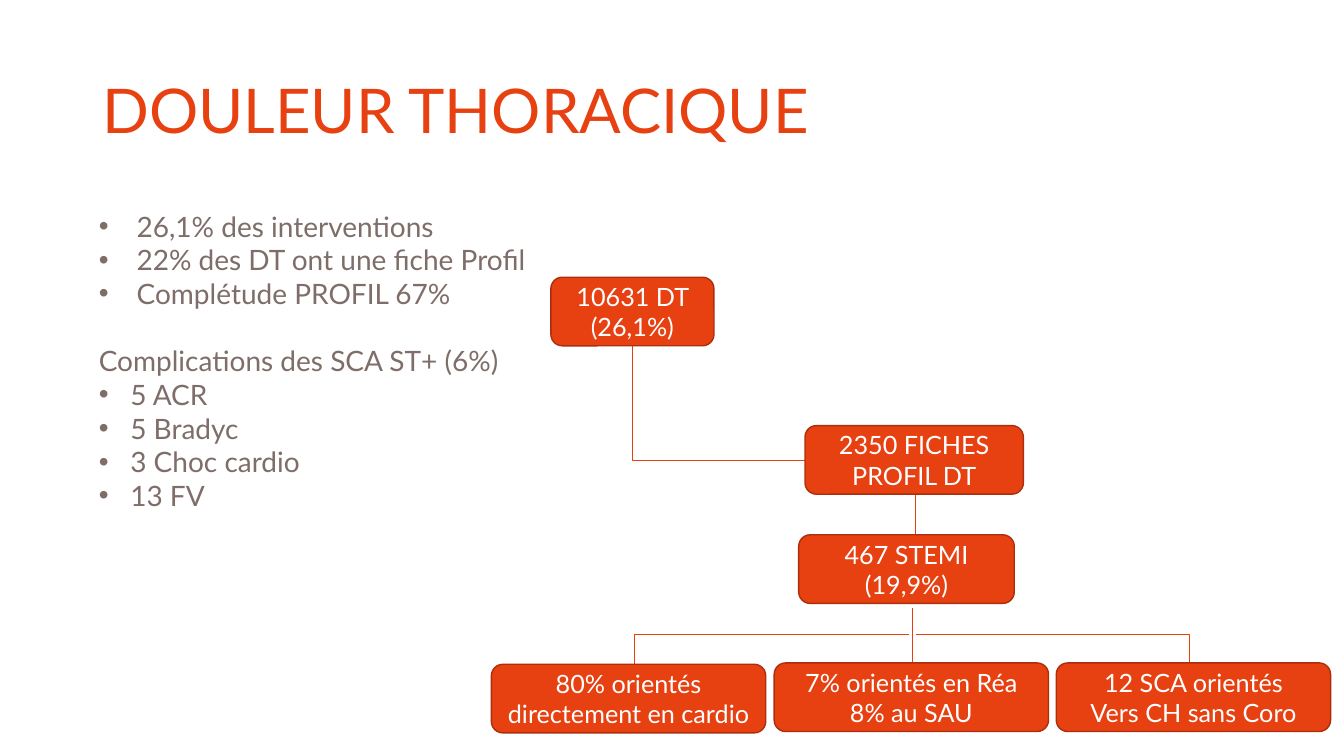
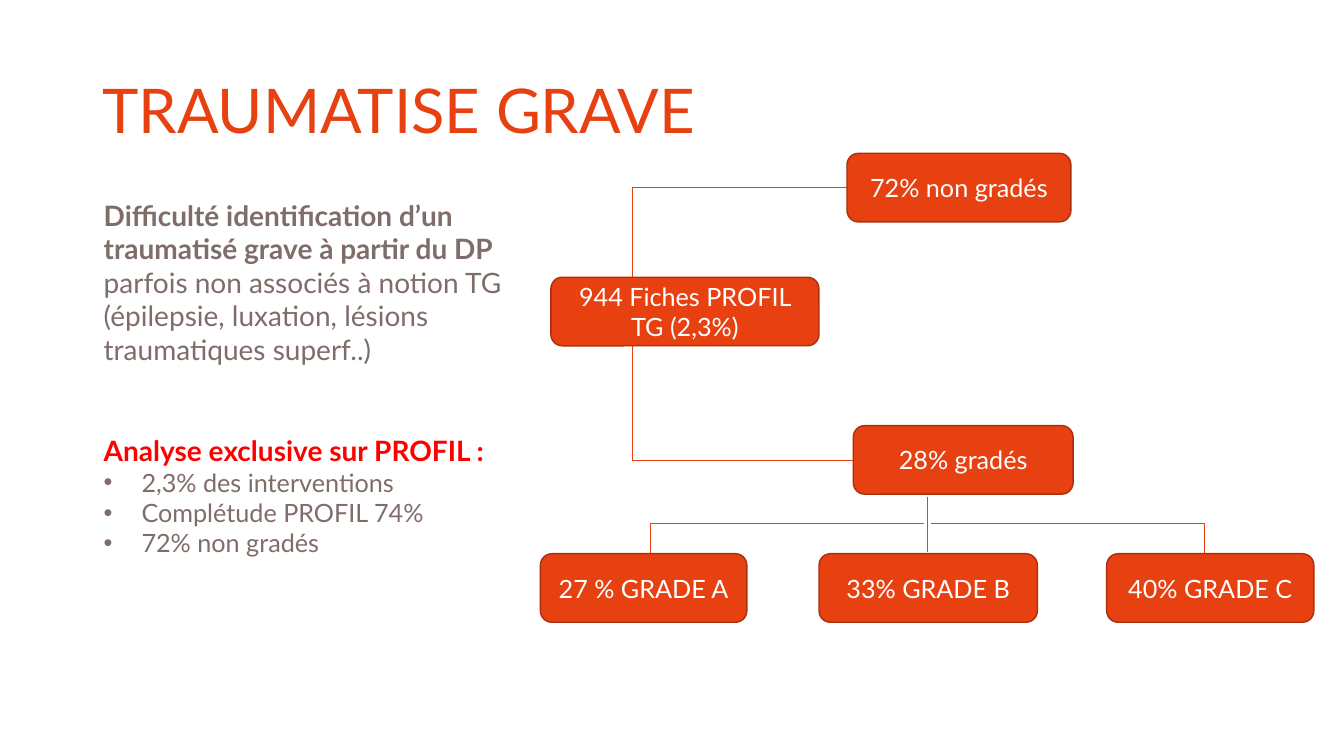
from lxml import etree
from pptx import Presentation
from pptx.dml.color import RGBColor
from pptx.enum import shapes, text
from pptx.oxml import ns
from pptx.util import Pt

COLORS = {
    "accent": "E74011",
    "edge": "AB2F0D",
    "body": "7E6D68",
    "alert": "FF0000",
    "white": "FFFFFF",
}
FONT = "Lato"
NODE_HEIGHT = 49


def rgb(name):
    """Return a palette colour."""
    return RGBColor.from_string(COLORS[name])


def style(paragraph, size, color, bold=False):
    """Set the font of a whole paragraph."""
    font = paragraph.font
    font.name, font.size, font.bold = FONT, Pt(size), bold
    font.color.rgb = rgb(color)


def add_text(slide, left, top, width, height):
    """Add a wrapping text box and return its frame."""
    frame = slide.shapes.add_textbox(Pt(left), Pt(top), Pt(width), Pt(height)).text_frame
    frame.word_wrap = True
    return frame


def add_title(slide, title):
    """Place the slide title."""
    frame = add_text(slide, 66, 29, 828, 104)
    frame.vertical_anchor = text.MSO_ANCHOR.MIDDLE
    heading = frame.paragraphs[0]
    heading.text, heading.line_spacing = title, 0.9
    style(heading, 44, "accent")


def add_bullet(paragraph, indent):
    """Give a paragraph a hanging bullet."""
    properties = paragraph._p.get_or_add_pPr()
    properties.set("marL", str(Pt(indent)))
    properties.set("indent", str(-Pt(indent)))
    etree.SubElement(properties, ns.qn("a:buFont")).set("typeface", "Arial")
    etree.SubElement(properties, ns.qn("a:buChar")).set("char", "•")


def add_notes_column(slide, left, top, height, entries):
    """Fill the left column from (runs, size, colour, indent, gap) entries."""
    frame = add_text(slide, left, top, 324, height)
    for index, (runs, size, color, indent, gap) in enumerate(entries):
        entry = frame.paragraphs[0] if index == 0 else frame.add_paragraph()
        style(entry, size, color)
        entry.space_before = Pt(gap)
        for words, bold in runs:
            run = entry.add_run()
            run.text, run.font.bold = words, bold
        if indent:
            add_bullet(entry, indent)


def add_node(slide, left, top, width, label):
    """Place one rounded box of the flow chart."""
    node = slide.shapes.add_shape(
        shapes.MSO_SHAPE.ROUNDED_RECTANGLE, Pt(left), Pt(top), Pt(width), Pt(NODE_HEIGHT))
    node.shadow.inherit = False
    node.fill.solid()
    node.fill.fore_color.rgb = rgb("accent")
    node.line.color.rgb, node.line.width = rgb("edge"), Pt(1)
    frame = node.text_frame
    frame.word_wrap, frame.text = True, label
    frame.vertical_anchor = text.MSO_ANCHOR.MIDDLE
    for line in frame.paragraphs:
        line.alignment = text.PP_ALIGN.CENTER
        style(line, 18, "white")


def add_link(slide, start, end):
    """Join two points, leaving horizontally when a bend is needed."""
    straight = start[0] == end[0]
    kind = shapes.MSO_CONNECTOR.STRAIGHT if straight else shapes.MSO_CONNECTOR.ELBOW
    link = slide.shapes.add_connector(kind, *(Pt(value) for value in (*start, *end)))
    link.line.color.rgb, link.line.width = rgb("accent"), Pt(0.5)
    properties = link._element.spPr
    if not straight:
        properties.find(ns.qn("a:prstGeom")).set("prst", "bentConnector2")
    etree.SubElement(properties, ns.qn("a:effectLst"))


def add_fork(slide, center, top):
    """Draw a stem with one branch on each side."""
    add_link(slide, (center, top), (center, top + 39))
    for side in (-1, 1):
        add_link(slide, (center + side * 2.5, top + 19), (center + side * 198, top + 40))


def add_flow(slide, nodes, links, fork):
    """Draw the links, the fork and then the boxes."""
    for start, end in links:
        add_link(slide, start, end)
    add_fork(slide, *fork)
    for node in nodes:
        add_node(slide, *node)


def build_chest_pain(slide):
    """Build the chest pain slide."""
    add_title(slide, "DOULEUR THORACIQUE")
    facts = ["26,1% des interventions", "22% des DT ont une fiche Profil",
             "Complétude PROFIL 67%"]
    complications = ["5 ACR", "5 Bradyc", "3 Choc cardio", "13 FV"]
    entries = [([(fact, False)], 20, "body", 27, 0) for fact in facts]
    entries.append(([("Complications des SCA ST+ (6%)", False)], 20, "body", 0, 24))
    entries += [([(item, False)], 20, "body", 22.5, 0) for item in complications]
    add_notes_column(slide, 63.5, 146, 247, entries)
    add_flow(slide, [
        (393.5, 198, 116.5, "10631 DT (26,1%)"),
        (575, 304, 156, "2350 FICHES PROFIL DT"),
        (570.5, 382, 154, "467 STEMI (19,9%)"),
        (351, 474.5, 196, "80% orientés directement en cardio"),
        (553, 473.5, 196, "7% orientés en Réa\n8% au SAU"),
        (754.5, 473.5, 196, "12 SCA orientés\nVers CH sans Coro"),
    ], [((605, 328.5), (452, 247)), ((653.5, 353), (653.5, 382))], (651.5, 434))


def build_trauma(slide):
    """Build the severe trauma slide."""
    add_title(slide, "TRAUMATISE GRAVE")
    difficulty = [
        ("Difficulté identification d’un traumatisé grave à partir du DP ", True),
        ("parfois non associés à notion TG (épilepsie, luxation, lésions "
         "traumatiques superf..)", False)]
    facts = ["2,3% des interventions", "Complétude PROFIL 74%", "72% non gradés"]
    entries = [(difficulty, 20, "body", 0, 0),
               ([("Analyse exclusive sur PROFIL :", True)], 20, "alert", 0, 48)]
    entries += [([(fact, False)], 18, "body", 27, 0) for fact in facts]
    add_notes_column(slide, 67, 138, 310, entries)
    add_flow(slide, [
        (393.5, 198, 191.5, "944 Fiches PROFIL TG (2,3%)"),
        (605, 109.5, 160, "72% non gradés"),
        (609.5, 304, 157, "28% gradés"),
        (386, 395.5, 147.5, "27 % GRADE A"),
        (585, 395.5, 156, "33% GRADE B"),
        (790.5, 395.5, 148, "40% GRADE C"),
    ], [((605, 134), (452, 198)), ((609.5, 328.5), (452, 247))], (662.5, 355))


def main():
    """Build and save the presentation."""
    deck = Presentation()
    deck.slide_width, deck.slide_height = Pt(960), Pt(540)
    for build in (build_chest_pain, build_trauma):
        build(deck.slides.add_slide(deck.slide_layouts[6]))
    deck.save("out.pptx")


if __name__ == "__main__":
    main()
